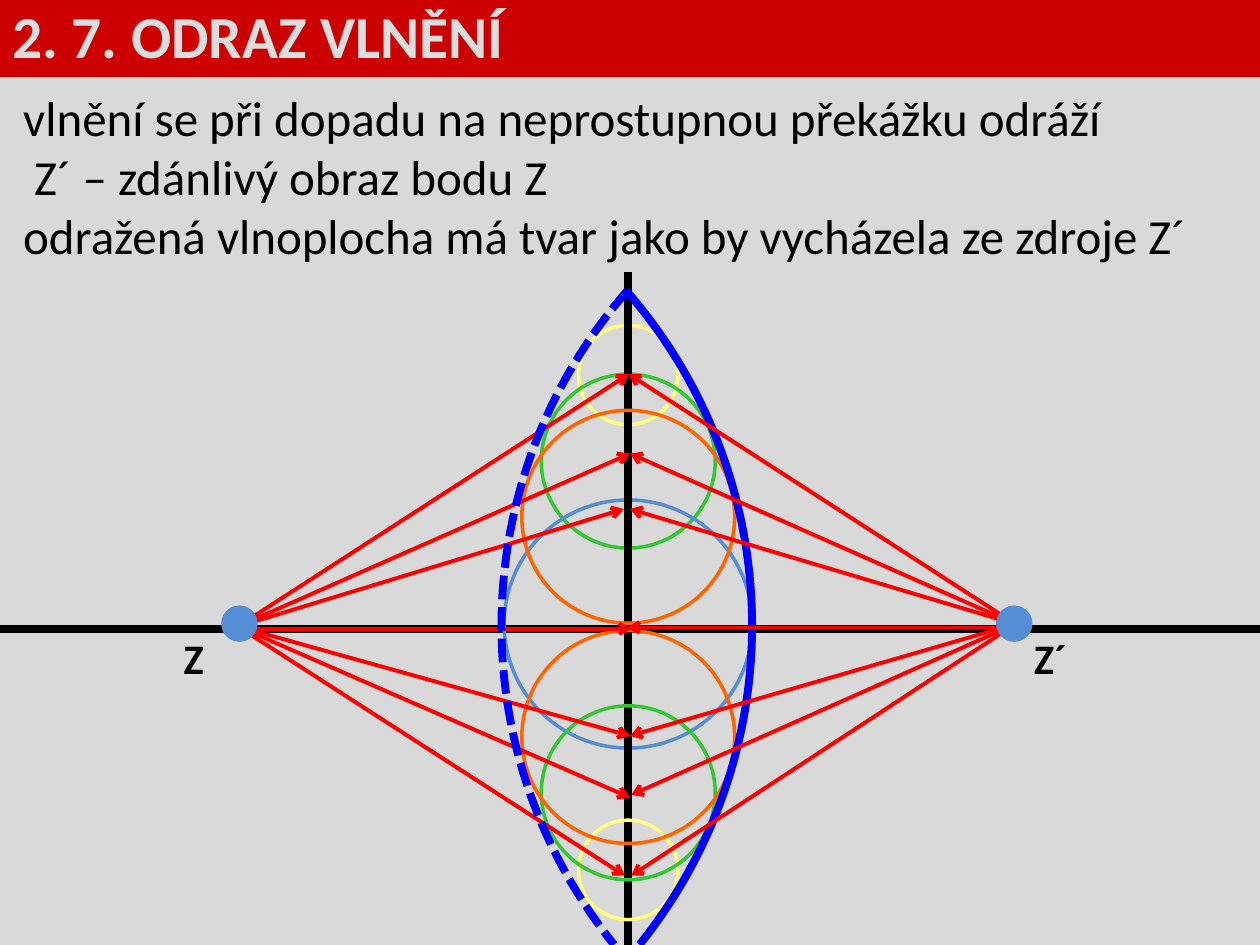
from lxml.etree import SubElement
from pptx import Presentation
from pptx.dml.color import RGBColor
from pptx.enum.dml import MSO_LINE_DASH_STYLE as Dash
from pptx.enum.shapes import MSO_CONNECTOR as Connector, MSO_SHAPE as Shape
from pptx.enum.text import MSO_ANCHOR as Anchor, PP_ALIGN as Align
from pptx.oxml.ns import qn
from pptx.util import Pt

BLACK, RED, BLUE, SOURCE = "000000", "FF0000", "0000FF", "558ED5"
YELLOW, GREEN, ORANGE = "FFFF82", "32C832", "FF6400"
WALL_X, AXIS_Y = 359, 359.3


def color(value):
    return RGBColor.from_string(value)


def set_values(target, values):
    for name, value in values.items():
        setattr(target, name, value)


def write(shape, lines, size, ink, bold=False, anchor=Anchor.TOP):
    frame = shape.text_frame
    set_values(frame, {"word_wrap": True, "vertical_anchor": anchor})
    for index, line in enumerate(lines):
        paragraph = frame.add_paragraph() if index else frame.paragraphs[0]
        paragraph.alignment = Align.LEFT
        run = paragraph.add_run()
        run.text = line
        set_values(run.font, {"name": "Calibri", "size": Pt(size), "bold": bold})
        run.font.color.rgb = color(ink)


def add_text(slide, left, top, width, height, lines, size, bold=False):
    box = slide.shapes.add_textbox(Pt(left), Pt(top), Pt(width), Pt(height))
    write(box, lines, size, BLACK, bold)


def add_shape(slide, kind, left, top, width, height, fill=None, ink=None, weight=2):
    shape = slide.shapes.add_shape(kind, Pt(left), Pt(top), Pt(width), Pt(height))
    shape.shadow.inherit = False
    if fill:
        shape.fill.solid()
        shape.fill.fore_color.rgb = color(fill)
    else:
        shape.fill.background()
    if ink:
        shape.line.color.rgb = color(ink)
        shape.line.width = Pt(weight)
    else:
        shape.line.fill.background()
    return shape


def add_circle(slide, x, y, radius, ink, fill=None):
    add_shape(slide, Shape.OVAL, x - radius, y - radius, 2 * radius, 2 * radius, fill, ink)


def add_line(slide, start, end, ink, weight, arrow=False):
    line = slide.shapes.add_connector(
        Connector.STRAIGHT, Pt(start[0]), Pt(start[1]), Pt(end[0]), Pt(end[1]))
    line.line.color.rgb = color(ink)
    line.line.width = Pt(weight)
    if arrow:
        SubElement(line.line._get_or_add_ln(), qn("a:tailEnd"), type="arrow")
    SubElement(line._element.spPr, qn("a:effectLst"))


def add_wavefront(slide, left, dashed=False):
    arc = add_shape(slide, Shape.ARC, left, 67, 581, 581, ink=BLUE, weight=4.5)
    arc.adjustments[0], arc.adjustments[1] = 191.282, 23.325
    if dashed:
        arc.line.dash_style = Dash.SQUARE_DOT
        arc._element.spPr.find(qn("a:xfrm")).set("flipH", "1")


def add_rays(slide, source, targets):
    for x, y in targets:
        # The central ray runs along the axis
        start_y = y if abs(y - AXIS_Y) < 2 else source[1]
        add_line(slide, (source[0], start_y), (x, y), RED, 2.25, arrow=True)


def main():
    presentation = Presentation()
    set_values(presentation, {"slide_width": Pt(720), "slide_height": Pt(540)})
    slide = presentation.slides.add_slide(presentation.slide_layouts[6])
    slide.background.fill.solid()
    slide.background.fill.fore_color.rgb = color("D9D9D9")

    # Heading and statements
    add_line(slide, (0, AXIS_Y), (720, AXIS_Y), BLACK, 4.5)
    add_text(slide, 6.2, 46.4, 731, 177, [
        "vlnění se při dopadu na neprostupnou překážku odráží",
        "\u00a0Z´ – zdánlivý obraz bodu Z".replace("\u00a0", " "),
        "odražená vlnoplocha má tvar jako by vycházela ze zdroje Z´"], 28)
    heading = add_shape(slide, Shape.RECTANGLE, 0, -4.3, 720, 48.3, fill="CC0000")
    write(heading, ["2. 7. ODRAZ VLNĚNÍ"], 34, "DDDDDD", True, Anchor.MIDDLE)

    # Elementary waves and the wall
    for y, radius, ink in [(214.3, 28.4, YELLOW), (263.5, 49.7, GREEN),
                           (356.6, 70.9, SOURCE)]:
        add_circle(slide, WALL_X, y, radius, ink)
    add_line(slide, (WALL_X, 155.5), (WALL_X, 546.5), BLACK, 4.5)
    for y, radius, ink in [(497.1, 28.4, YELLOW), (453, 49.7, GREEN),
                           (295.3, 60.8, ORANGE), (421.2, 60.8, ORANGE)]:
        add_circle(slide, WALL_X, y, radius, ink)

    # Wavefronts and rays
    add_wavefront(slide, -151.2)
    add_rays(slide, (136, 358), [
        (359.3, 213.8), (360, 259.2), (356.4, 290.9), (360.7, 359.3),
        (360, 420.5), (360, 455.8), (357.1, 500.4)])
    add_rays(slide, (580.3, 356.6), [
        (359.3, 213.8), (360, 259.2), (360, 290.9), (358.6, 358.6),
        (360, 420.5), (360.7, 454.3), (360.7, 500.4)])

    # Source and its apparent image
    for x in (579.6, 136.8):
        add_circle(slide, x, 356.4, 9.4, SOURCE, SOURCE)
    add_wavefront(slide, 286.6, dashed=True)
    for left, label in [(97.9, "Z"), (583.9, "Z´")]:
        add_text(slide, left, 357.8, 94.3, 36, [label], 24, True)

    presentation.save("out.pptx")


if __name__ == "__main__":
    main()
